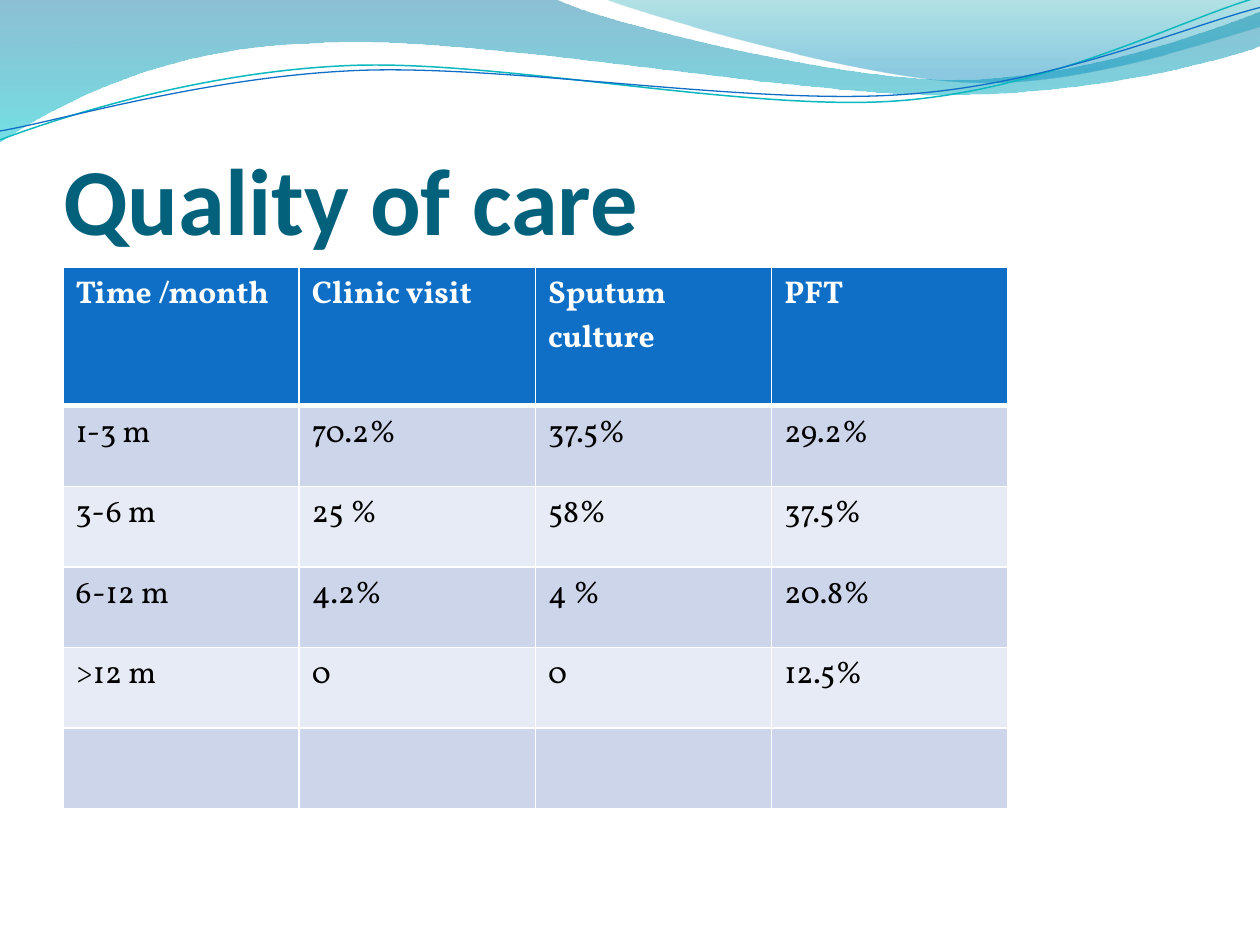
from math import cos, radians, sin

from lxml import etree
from pptx import Presentation
from pptx.dml.color import RGBColor
from pptx.enum.text import MSO_ANCHOR, MSO_AUTO_SIZE, PP_ALIGN
from pptx.oxml.ns import qn
from pptx.util import Inches, Pt

COLORS = {
    "title": "04617B", "header": "0F6FC6", "odd": "CCD5EA", "even": "E7EBF5",
    "white": "FFFFFF", "text": "000000", "teal": "0AB8BF", "blue": "0F6FC6",
    "deep": "0074A1", "cyan": "00C6CF", "green": "00A1A9", "sky": "008BBF",
}
TITLE = "Quality of care"
ROWS = [
    ["Time /month", "Clinic visit", "Sputum culture", "PFT"],
    ["1-3 m", "70.2%", "37.5%", "29.2%"],
    ["3-6 m", "25 %", "58%", "37.5%"],
    ["6-12 m", "4.2%", "4 %", "20.8%"],
    [">12 m", "0", "0", "12.5%"],
    ["", "", "", ""],
]
HEADER_HEIGHT, ROW_HEIGHT, TABLE_WIDTH = 1.1, 0.64, 7.5

# Each step holds one point (straight line) or three points (Bezier curve).
BANDS = [
    {"start": (0, 0),
     "steps": [[(4.4, -0.01)],
               [(4.76, 0.17), (6.64, 0.63), (7.58, 0.63)],
               [(8.53, 0.63), (9.58, 0.26), (10, 0.09)],
               [(10.01, 0.36)],
               [(9.83, 0.44), (8.7, 0.76), (7.46, 0.75)],
               [(6.22, 0.75), (3.82, 0.28), (2.57, 0.34)],
               [(1.29, 0.36), (0.46, 0.83), (-0.01, 1.13)]],
     "stops": [("deep", 0, 45), ("cyan", 1, 55)]},
    {"start": (4.79, -0.01),
     "steps": [[(5.09, 0.11), (6.82, 0.62), (7.69, 0.65)],
               [(8.56, 0.69), (9.61, 0.32), (10, 0.21)],
               [(10, 0)]],
     "stops": [("green", 0, 30), ("sky", 0.8, 45)]},
]
WAVE_TILT = -2.7
WAVES = [
    {"start": (0, 1.11),
     "steps": [[(0.48, 0.93), (1.58, 0.57), (2.77, 0.52)],
               [(3.95, 0.47), (5.93, 0.89), (7.13, 0.8)],
               [(8.33, 0.71), (9.38, 0.15), (9.98, -0.02)]],
     "center": (4.99, 0.58), "color": "teal", "width": 0.85},
    {"start": (0, 1.04),
     "steps": [[(0.47, 0.96), (1.64, 0.61), (2.83, 0.56)],
               [(4.03, 0.51), (5.97, 0.84), (7.17, 0.75)],
               [(8.36, 0.67), (9.41, 0.21), (10, 0.06)]],
     "center": (5, 0.59), "color": "blue", "width": 0.75},
]


def rgb(name):
    return RGBColor.from_string(COLORS[name])


def turn(point, center, degrees):
    """Turn a point clockwise around a center."""
    x, y = point[0] - center[0], point[1] - center[1]
    angle = radians(degrees)
    return (center[0] + x * cos(angle) - y * sin(angle),
            center[1] + x * sin(angle) + y * cos(angle))


def add_outline(page, start, steps, close):
    """Draw lines through all points, then join each three-point step into one curve."""
    points = [(Inches(x), Inches(y)) for x, y in [start, *sum(steps, [])]]
    builder = page.shapes.build_freeform(*points[0])
    builder.add_line_segments(points[1:], close=close)
    shape = builder.convert_to_shape()
    shape.shadow.inherit = False
    lines = iter(list(shape.element.spPr.iter(qn("a:lnTo"))))
    for step in steps:
        segment = [next(lines) for _ in step]
        if len(segment) == 3:
            curve = etree.Element(qn("a:cubicBezTo"))
            segment[0].addprevious(curve)
            for line in segment:
                curve.append(line[0])
                line.getparent().remove(line)
    return shape


def add_band(page, start, steps, stops):
    band = add_outline(page, start, steps, True)
    band.line.fill.background()
    band.fill.gradient()
    band.fill.gradient_angle = 270
    for stop, (color, position, _) in zip(band.fill.gradient_stops, stops):
        stop.color.rgb = rgb(color)
        stop.position = position
    color_tags = list(band.element.spPr.iter(qn("a:srgbClr")))
    for tag, (_, _, opacity) in zip(color_tags, stops):
        etree.SubElement(tag, qn("a:alpha"), val=str(opacity * 1000))


def add_wave(page, start, steps, center, color, width):
    level_start = turn(start, center, -WAVE_TILT)
    level_steps = [[turn(point, center, -WAVE_TILT) for point in step] for step in steps]
    wave = add_outline(page, level_start, level_steps, False)
    wave.rotation = WAVE_TILT
    wave.fill.background()
    wave.line.color.rgb = rgb(color)
    wave.line.width = Pt(width)


def style_text(paragraph, color, **formats):
    paragraph.font.color.rgb = rgb(color)
    for name, value in formats.items():
        setattr(paragraph.font, name, value)


def set_borders(cell, widths):
    properties = cell._tc.get_or_add_tcPr()
    for side, width in widths.items():
        line = etree.SubElement(properties, qn(f"a:ln{side}"), w=str(Pt(width)))
        fill = etree.SubElement(line, qn("a:solidFill"))
        etree.SubElement(fill, qn("a:srgbClr"), val=COLORS["white"])


def add_title(page):
    title = page.shapes.title
    title.element.getparent().append(title.element)
    title.left, title.top, title.width, title.height = map(Inches, (0.5, 0.77, 9, 1.25))
    frame = title.text_frame
    frame.text = TITLE
    formats = {"auto_size": MSO_AUTO_SIZE.NONE, "vertical_anchor": MSO_ANCHOR.BOTTOM,
               "margin_left": 0, "margin_right": 0,
               "margin_top": Inches(0.05), "margin_bottom": 0}
    for name, value in formats.items():
        setattr(frame, name, value)
    paragraph = frame.paragraphs[0]
    paragraph.alignment = PP_ALIGN.LEFT
    style_text(paragraph, "title", name="Calibri", size=Pt(54), bold=True)


def add_care_table(page):
    heights = [HEADER_HEIGHT] + [ROW_HEIGHT] * (len(ROWS) - 1)
    table = page.shapes.add_table(
        len(ROWS), len(ROWS[0]), Inches(0.5), Inches(2.12),
        Inches(TABLE_WIDTH), Inches(sum(heights))).table
    for row_index, (values, height) in enumerate(zip(ROWS, heights)):
        table.rows[row_index].height = Inches(height)
        header = row_index == 0
        fill = "header" if header else "odd" if row_index % 2 else "even"
        borders = {"L": 1, "R": 1, "T": 3 if row_index == 1 else 1, "B": 3 if header else 1}
        for column_index, value in enumerate(values):
            cell = table.cell(row_index, column_index)
            set_borders(cell, borders)
            cell.fill.solid()
            cell.fill.fore_color.rgb = rgb(fill)
            cell.text = value
            style_text(cell.text_frame.paragraphs[0], "white" if header else "text",
                       name="Vollkorn", size=Pt(18), bold=header)


def main():
    deck = Presentation()
    deck.slide_width, deck.slide_height = Inches(10), Inches(7.5)
    page = deck.slides.add_slide(deck.slide_layouts.get_by_name("Title Only"))
    for band in BANDS:
        add_band(page, **band)
    for wave in WAVES:
        add_wave(page, **wave)
    add_title(page)
    add_care_table(page)
    deck.save("out.pptx")


if __name__ == "__main__":
    main()
